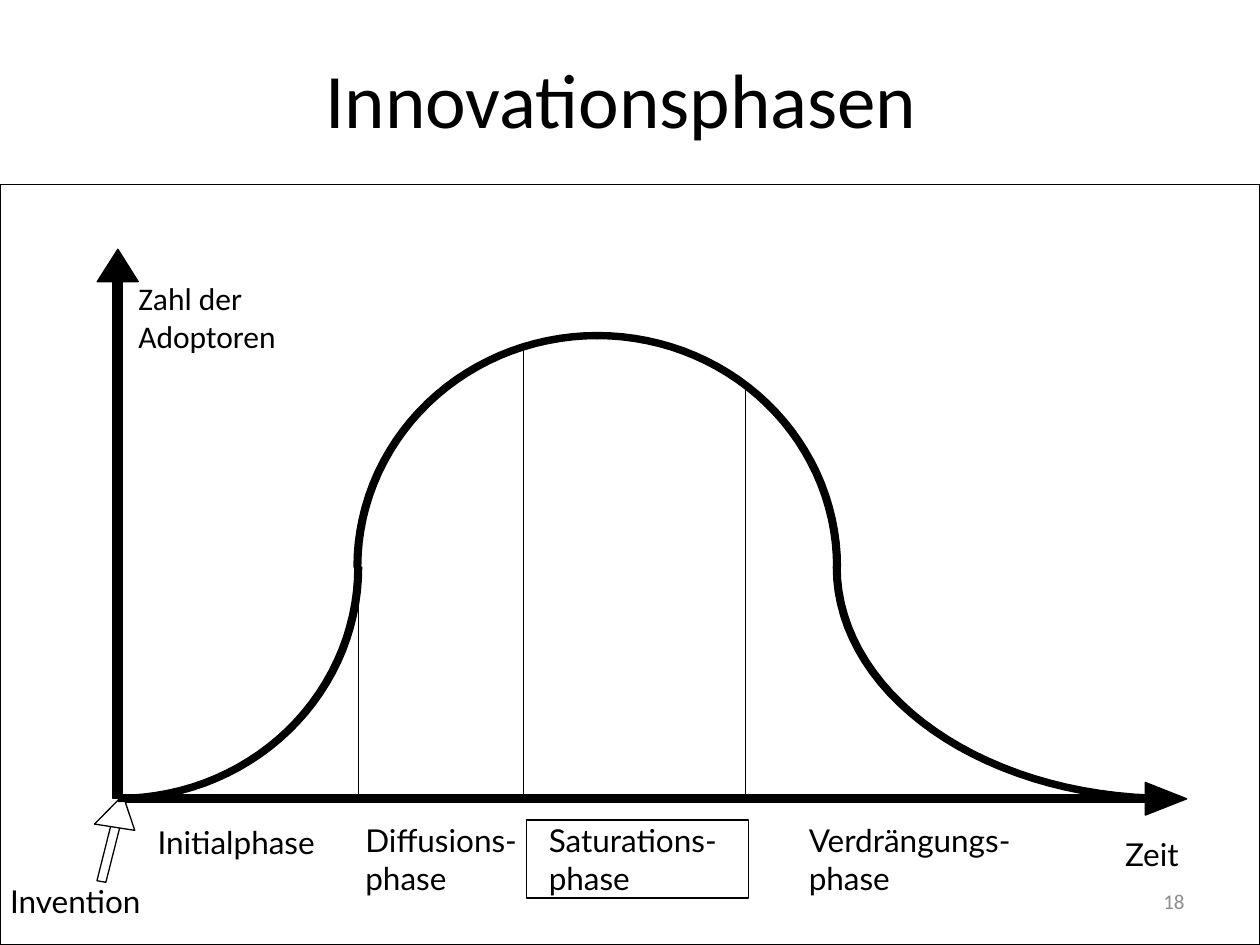
from math import cos, pi, sin

from lxml.etree import SubElement
from pptx import Presentation
from pptx.dml.color import RGBColor
from pptx.enum.shapes import MSO_CONNECTOR as CONN, MSO_SHAPE as SHAPE
from pptx.enum.text import MSO_ANCHOR as ANCHOR, PP_ALIGN as ALIGN
from pptx.oxml.ns import qn
from pptx.util import Pt

BLACK = RGBColor(0, 0, 0)
WHITE = RGBColor(255, 255, 255)
GREY = RGBColor(0x8C, 0x8C, 0x8C)

TITLE = ("Innovationsphasen ", 36, 23, 648, 65.5)
AXIS_TITLES = [
    ("Zahl der Adoptoren", 72, 156.2, 108, 55.4, "Calibri"),
    ("Zeit", 635.8, 473.8, 72, 31, "Lato"),
]
PAGE_NUMBER = ("18", 516, 500.4, 168, 28.8)
LABELS = [
    ([["Saturations-", "phase"]], 313.6, 469.4, 106.6, 48),
    ([["Diffusions-", "phase"]], 208.8, 469.4, 93.6, 48),
    ([["Invention"]], 5.8, 504.2, 83.5, 24),
    ([["Verdrängungs-"], ["phase"]], 462.2, 469.4, 129.6, 48),
    ([["Initialphase"]], 90, 470.2, 101.5, 24),
]
FRAMES = [(0, 105.6, 720, 434.4), (301, 468.6, 126.8, 44.6)]
DIVIDERS = [(204.5, 338.4, 458), (299.2, 198, 455.2), (425.7, 221, 456.4)]
ARROWS = [
    ([(64.6, 160.6), (69.8, 160.6), (69.8, 456.4), (64.6, 456.4)],
     [(79, 160.9), (67.4, 142.4), (55.6, 160.9)], BLACK),
    ([(67.7, 454.4), (67.7, 458.6), (655.2, 458.6), (655.2, 454.4)],
     [(654.5, 465.8), (678.2, 456.5), (654.5, 447.1)], BLACK),
    ([(55.4, 503.3), (60.5, 504.2), (68.4, 473), (63.4, 471.6)],
     [(77, 474.5), (70.3, 454.4), (54, 470.9)], WHITE),
]
MID_Y, OUTER_RY, INNER_RY, BAND = 324, 134, 130.5, 3.9
QUADRANTS = [
    (341.3, 139, -1, -1),
    (67.7, 139, 1, 1),
    (341.3, 139, 1, -1),
    (667.5, 191.3, -1, 1),
]
STEPS = 30


def style(sp, fill=None):
    sp.shadow.inherit = False
    sp.line.color.rgb = BLACK
    sp.line.width = Pt(0.75)
    if fill is None:
        sp.fill.background()
    else:
        sp.fill.solid()
        sp.fill.fore_color.rgb = fill


def add_polygon(shapes, points, fill):
    (x, y), *rest = [(Pt(px), Pt(py)) for px, py in points]
    builder = shapes.build_freeform(x, y, scale=1.0)
    builder.add_line_segments(rest, close=True)
    style(builder.convert_to_shape(), fill)


def quarter(cx, rx, ry, side, half):
    angles = [pi / 2 * i / STEPS for i in range(STEPS + 1)]
    return [(cx + side * rx * cos(a), MID_Y + half * ry * sin(a)) for a in angles]


def add_text(s, paragraphs, x, y, w, h, size=18, font="Lato", color=BLACK,
             align=ALIGN.LEFT, anchor=ANCHOR.TOP, tight=False):
    tf = s.shapes.add_textbox(Pt(x), Pt(y), Pt(w), Pt(h)).text_frame
    tf.word_wrap = not tight
    tf.vertical_anchor = anchor
    if tight:
        tf.margin_left = tf.margin_right = tf.margin_top = tf.margin_bottom = 0
    for i, lines in enumerate(paragraphs):
        p = tf.add_paragraph() if i else tf.paragraphs[0]
        p.alignment = align
        for j, line in enumerate(lines):
            if j:
                p.add_line_break()
            r = p.add_run()
            r.text = line
            r.font.size = Pt(size)
            r.font.name = font
            r.font.color.rgb = color


def main():
    prs = Presentation()
    prs.slide_width, prs.slide_height = Pt(720), Pt(540)
    s = prs.slides.add_slide(prs.slide_layouts[6])

    for frame in FRAMES:
        style(s.shapes.add_shape(SHAPE.RECTANGLE, *map(Pt, frame)))

    for shaft, head, fill in ARROWS:
        group = s.shapes.add_group_shape()
        add_polygon(group.shapes, shaft, fill)
        add_polygon(group.shapes, head, fill)

    for cx, rx, side, half in QUADRANTS:
        outer = quarter(cx, rx, OUTER_RY, side, half)
        inner = quarter(cx, rx - BAND, INNER_RY, side, half)
        add_polygon(s.shapes, outer + inner[::-1], BLACK)

    for x, top, bottom in DIVIDERS:
        line = s.shapes.add_connector(CONN.STRAIGHT, Pt(x), Pt(top), Pt(x), Pt(bottom))
        line.line.color.rgb = BLACK
        line.line.width = Pt(0.25)
        SubElement(line._element.spPr, qn("a:effectLst"))

    title, *box = TITLE
    add_text(s, [[title]], *box, size=44, font="Calibri",
             align=ALIGN.CENTER, anchor=ANCHOR.MIDDLE)
    for text, *box, font in AXIS_TITLES:
        add_text(s, [[text]], *box, font=font)
    for paragraphs, *box in LABELS:
        add_text(s, paragraphs, *box, tight=True)
    number, *box = PAGE_NUMBER
    add_text(s, [[number]], *box, size=12, font="Calibri", color=GREY,
             align=ALIGN.RIGHT, anchor=ANCHOR.MIDDLE)

    prs.save("out.pptx")


if __name__ == "__main__":
    main()
